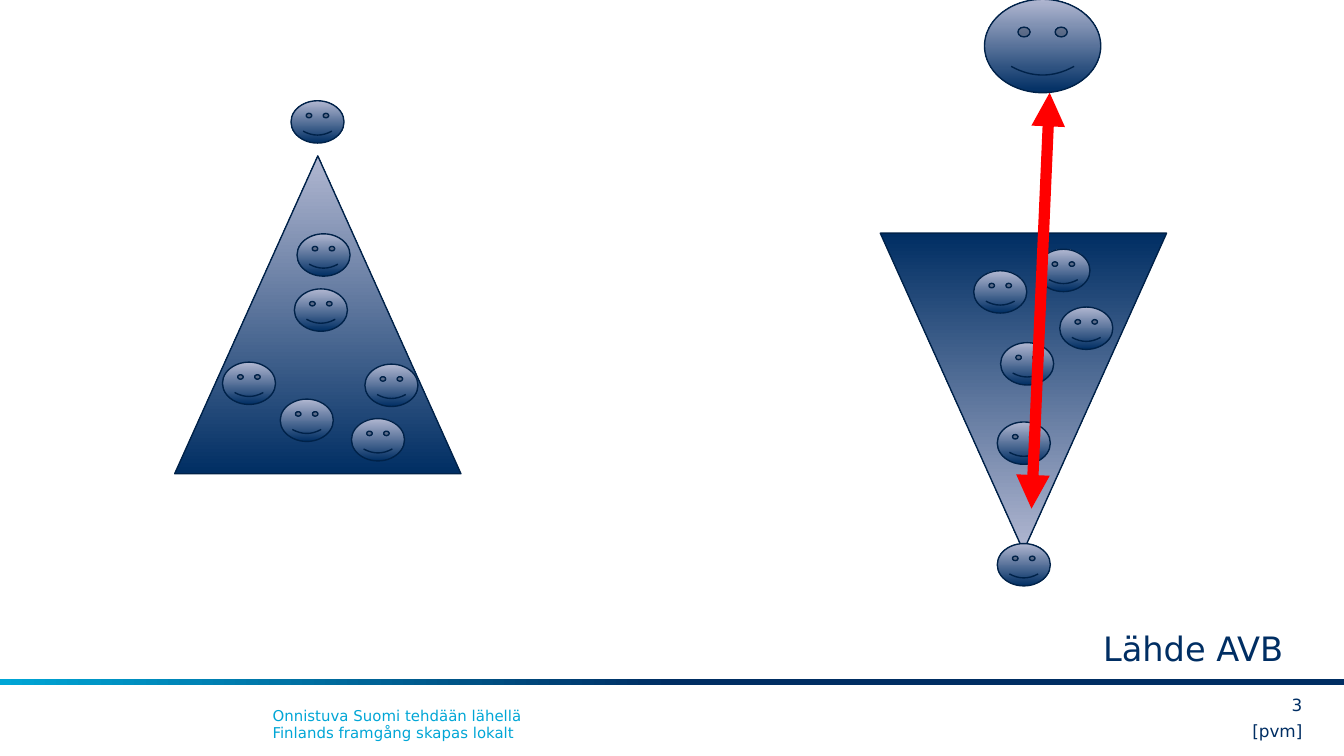
from typing import NamedTuple

from lxml.etree import SubElement
from pptx import Presentation
from pptx.dml.color import RGBColor
from pptx.enum.shapes import MSO_CONNECTOR as Connector, MSO_SHAPE as Shape
from pptx.enum.text import MSO_ANCHOR as Anchor, PP_ALIGN as Align
from pptx.oxml.ns import qn
from pptx.util import Emu, Pt

PX = 4572  # 200 px to the inch
NAVY = RGBColor(0x00, 0x2E, 0x63)
OUTLINE = RGBColor(0x00, 0x22, 0x49)
LAVENDER = RGBColor(0xB1, 0xB7, 0xD1)
CYAN = RGBColor(0x00, 0xA6, 0xD6)
RED = RGBColor(0xFF, 0x00, 0x00)
FONT = "DejaVu Sans"


class Box(NamedTuple):
    left: int
    top: int
    width: int
    height: int


class Point(NamedTuple):
    x: int
    y: int


FACE_WIDTH, FACE_HEIGHT = 79, 63
TRIANGLE_WIDTH, TRIANGLE_HEIGHT = 426, 473

# Top left corners of the small faces
TEAM_UNDER_LEADER = [Point(417, 594), Point(543, 542), Point(438, 430),
                     Point(523, 623), Point(442, 348), Point(331, 539)]
TEAM_OVER_LEADER = [Point(1489, 510), Point(1543, 371), Point(1449, 403),
                    Point(1577, 457), Point(1484, 628)]
LEADERS = [Point(433, 150), Point(1484, 809)]


def px(length: int) -> Emu:
    return Emu(length * PX)


def add_gradient_shape(slide, kind: Shape, box: Box, start: RGBColor = NAVY,
                       end: RGBColor = LAVENDER, start_at: float = 0,
                       angle: int = 90, outlined: bool = True,
                       rotation: int = 0) -> None:
    shape = slide.shapes.add_shape(kind, *map(px, box))
    shape.shadow.inherit = False
    shape.rotation = rotation
    shape.fill.gradient()
    shape.fill.gradient_angle = angle
    stops = shape.fill.gradient_stops
    for stop, color, position in zip(stops, (start, end), (start_at, 1)):
        stop.color.rgb = color
        stop.position = position
    if outlined:
        shape.line.color.rgb = OUTLINE
        shape.line.width = Pt(0.75)
    else:
        shape.line.fill.background()


def add_face(slide, corner: Point) -> None:
    add_gradient_shape(slide, Shape.SMILEY_FACE,
                       Box(corner.x, corner.y, FACE_WIDTH, FACE_HEIGHT))


def add_triangle(slide, corner: Point, rotation: int = 0) -> None:
    add_gradient_shape(slide, Shape.ISOSCELES_TRIANGLE,
                       Box(corner.x, corner.y, TRIANGLE_WIDTH, TRIANGLE_HEIGHT),
                       rotation=rotation)


def add_text(slide, box: Box, *lines: str, size: int, color: RGBColor = NAVY,
             align: Align = Align.LEFT, anchor: Anchor = Anchor.TOP,
             inset: bool = True) -> None:
    frame = slide.shapes.add_textbox(*map(px, box)).text_frame
    frame.word_wrap = True
    frame.vertical_anchor = anchor
    if not inset:
        frame.margin_left = frame.margin_right = 0
        frame.margin_top = frame.margin_bottom = 0
    paragraph = frame.paragraphs[0]
    paragraph.alignment = align
    for index, line in enumerate(lines):
        if index:
            paragraph.add_line_break()
        run = paragraph.add_run()
        run.text = line
        run.font.name = FONT
        run.font.size = Pt(size)
        run.font.color.rgb = color


def add_double_arrow(slide, start: Point, end: Point, color: RGBColor,
                     width: float) -> None:
    arrow = slide.shapes.add_connector(Connector.STRAIGHT,
                                       *map(px, (*start, *end)))
    arrow.line.color.rgb = color
    arrow.line.width = Pt(width)
    properties = arrow._element.spPr
    line = properties.find(qn("a:ln"))
    for tip in ("a:headEnd", "a:tailEnd"):
        SubElement(line, qn(tip), type="triangle")
    SubElement(properties, qn("a:effectLst"))


def main() -> None:
    deck = Presentation()
    deck.slide_width, deck.slide_height = px(2000), px(1125)
    slide = deck.slides.add_slide(deck.slide_layouts[6])

    # Footer
    add_gradient_shape(slide, Shape.RECTANGLE, Box(0, 1010, 2000, 10),
                       end=CYAN, start_at=0.5, angle=180, outlined=False)
    add_text(slide, Box(386, 1041, 1308, 74), "Onnistuva Suomi tehdään lähellä",
             "Finlands framgång skapas lokalt", size=8, color=CYAN)
    for box, label in ((Box(1740, 1066, 198, 44), "[pvm]"),
                       (Box(1852, 1027, 86, 44), "3")):
        add_text(slide, box, label, size=9, align=Align.RIGHT,
                 anchor=Anchor.MIDDLE, inset=False)

    # Upright and inverted organisations
    add_triangle(slide, Point(260, 232))
    add_triangle(slide, Point(1310, 347), rotation=180)
    for corner in TEAM_UNDER_LEADER + TEAM_OVER_LEADER + LEADERS:
        add_face(slide, corner)

    # Source credit
    add_text(slide, Box(1622, 925, 316, 80), "Lähde AVB", size=18)

    # Customer linked to the inverted organisation
    add_double_arrow(slide, Point(1562, 138), Point(1535, 757), RED, 6)
    add_gradient_shape(slide, Shape.SMILEY_FACE, Box(1465, -1, 173, 139))

    deck.save("out.pptx")


if __name__ == "__main__":
    main()
